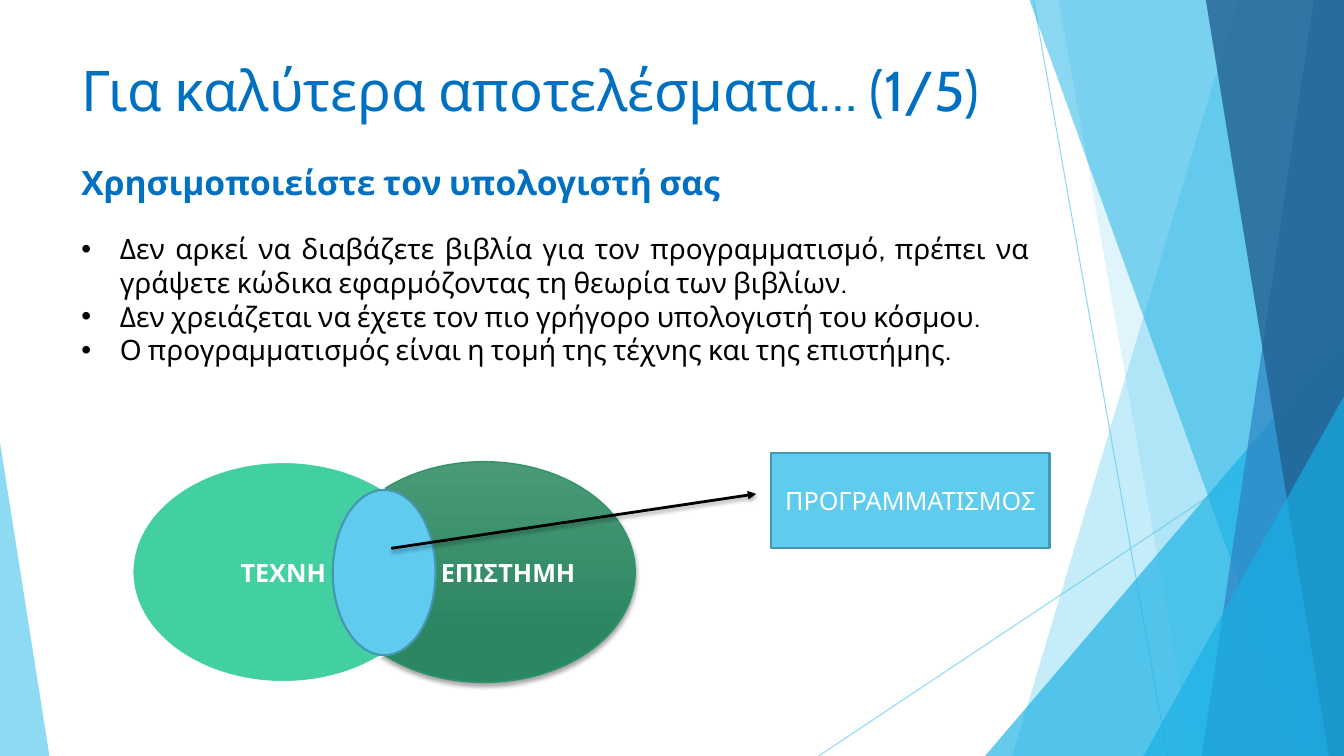
from dataclasses import dataclass

from lxml.etree import SubElement
from pptx import Presentation
from pptx.dml.color import RGBColor as RGB
from pptx.enum.shapes import MSO_CONNECTOR as CONN, MSO_SHAPE as SHAPE
from pptx.enum.text import MSO_ANCHOR as ANCHOR, PP_ALIGN as ALIGN
from pptx.oxml.ns import qn
from pptx.util import Inches, Pt

W, H = 13.33, 7.5


@dataclass(frozen=True)
class Theme:
    """Colours, font and type sizes of the slide."""
    font: str = "Cabin"
    heading: str = "0070C0"
    ink: str = "000000"
    white: str = "FFFFFF"
    sky: str = "5FCBEF"
    cyan: str = "17B0E4"
    blue: str = "2E83C3"
    navy: str = "226292"
    sky_edge: str = "4696B1"
    mint: str = "42D0A2"
    green_top: str = "4A9A76"
    green: str = "2A8762"
    green_edge: str = "2E946B"
    title_size: int = 40
    subtitle_size: int = 24
    body_size: int = 20
    label_size: int = 18


T = Theme()


@dataclass(frozen=True)
class Facet:
    """A translucent panel from a slanted left edge to the slide's right edge."""
    top_x: float
    bottom_x: float
    color: str
    alpha: int


@dataclass(frozen=True)
class Wedge:
    """A translucent right triangle standing on the slide's bottom edge."""
    x: float
    width: float
    height: float
    apex: float
    color: str
    alpha: int


@dataclass(frozen=True)
class Node:
    """A labelled shape of the diagram."""
    kind: SHAPE
    box: tuple[float, float, float, float]
    fill: str
    edge: str
    edge_width: float
    label: str = ""
    bold: bool = True
    shift: float = 0
    gradient_top: str = ""


DECOR = [
    Facet(12.28, 10.04, T.sky, 36),
    Facet(10.5, 11.83, T.sky, 20),
    Wedge(9.77, 3.56, 4.17, 1, T.cyan, 66),
    Facet(10.21, 12.91, T.cyan, 50),
    Facet(13.03, 11.92, T.blue, 70),
    Facet(11.96, 13.18, T.navy, 80),
    Wedge(11.34, 1.99, 3.57, 1, T.cyan, 66),
    Wedge(0, 0.49, 3.11, 0, T.sky, 70),
]
NODES = [
    Node(SHAPE.OVAL, (3.3, 4.58, 3, 2.19), T.green, T.green_edge, 1,
         "ΕΠΙΣΤΗΜΗ", shift=0.48, gradient_top=T.green_top),
    Node(SHAPE.OVAL, (1.31, 4.58, 3, 2.19), T.mint, T.white, 2, "ΤΕΧΝΗ"),
    Node(SHAPE.OVAL, (3.3, 4.86, 1.02, 1.64), T.sky, T.sky_edge, 1.5),
    Node(SHAPE.RECTANGLE, (7.65, 4.49, 2.76, 0.95), T.sky, T.sky_edge, 1.5,
         "ΠΡΟΓΡΑΜΜΑΤΙΣΜΟΣ", bold=False),
]
BULLETS = [
    "Δεν αρκεί να διαβάζετε βιβλία για τον προγραμματισμό, πρέπει να \v"
    "γράψετε κώδικα εφαρμόζοντας τη θεωρία των βιβλίων.",
    "Δεν χρειάζεται να έχετε τον πιο γρήγορο υπολογιστή του κόσμου.",
    "Ο προγραμματισμός είναι η τομή της τέχνης και της επιστήμης.",
]


def set_alpha(fill, percent: int) -> None:
    """Make a solid fill translucent."""
    clr = fill.find(".//" + qn("a:srgbClr"))
    SubElement(clr, qn("a:alpha"), val=str(percent * 1000))


def add_shadow(effects) -> None:
    """Put a soft shadow below the element that owns the effect list."""
    shadow = SubElement(effects, qn("a:outerShdw"), blurRad=str(Pt(3)),
                        dist=str(Pt(2)), dir="5400000", rotWithShape="0")
    clr = SubElement(shadow, qn("a:srgbClr"), val=T.ink)
    SubElement(clr, qn("a:alpha"), val="35000")


def add_line(s, start: tuple[float, float], end: tuple[float, float],
             color: str, width: float):
    """Draw a straight line with an empty effect list."""
    line = s.shapes.add_connector(CONN.STRAIGHT, *map(Inches, start + end))
    line.line.color.rgb = RGB.from_string(color)
    line.line.width = Pt(width)
    SubElement(line._element.spPr, qn("a:effectLst"))
    return line


def add_decor(s, part: Facet | Wedge) -> None:
    """Draw one translucent background panel."""
    if isinstance(part, Facet):
        outline = s.shapes.build_freeform(Inches(part.top_x), 0)
        corners = [(W, 0), (W, H), (part.bottom_x, H)]
        outline.add_line_segments([(Inches(x), Inches(y)) for x, y in corners])
        sp = outline.convert_to_shape()
    else:
        box = part.x, H - part.height, part.width, part.height
        sp = s.shapes.add_shape(SHAPE.ISOSCELES_TRIANGLE, *map(Inches, box))
        sp.adjustments[0] = part.apex
    sp.fill.solid()
    sp.fill.fore_color.rgb = RGB.from_string(part.color)
    set_alpha(sp._element.spPr, part.alpha)
    sp.line.fill.background()
    sp.shadow.inherit = False


def style(p, size: int, color: str, bold: bool, align: ALIGN) -> None:
    """Format a paragraph and its runs."""
    p.alignment = align
    for r in p.runs:
        r.font.name = T.font
        r.font.size = Pt(size)
        r.font.bold = bold
        r.font.color.rgb = RGB.from_string(color)


def add_text(s, box: tuple[float, float, float, float], lines: list[str],
             size: int, color: str, bold: bool = False,
             align: ALIGN = ALIGN.JUSTIFY, bulleted: bool = False) -> None:
    """Add a wrapped text box with one paragraph per line."""
    tf = s.shapes.add_textbox(*map(Inches, box)).text_frame
    tf.word_wrap = True
    for i, line in enumerate(lines):
        p = tf.add_paragraph() if i else tf.paragraphs[0]
        p.text = line
        style(p, size, color, bold, align)
        if bulleted:
            pPr = p._p.get_or_add_pPr()
            pPr.set("marL", str(Inches(0.38)))
            pPr.set("indent", str(-Inches(0.38)))
            SubElement(pPr, qn("a:buFont"), typeface="Arial")
            SubElement(pPr, qn("a:buChar"), char="•")


def add_node(s, node: Node) -> None:
    """Draw one diagram shape with its label."""
    sp = s.shapes.add_shape(node.kind, *map(Inches, node.box))
    sp.shadow.inherit = False
    if node.gradient_top:
        sp.fill.gradient()
        sp.fill.gradient_angle = 270
        stops = zip(sp.fill.gradient_stops, (node.gradient_top, node.fill), (0, 0.78))
        for stop, color, position in stops:
            stop.color.rgb = RGB.from_string(color)
            stop.position = position
        add_shadow(sp._element.spPr.find(qn("a:effectLst")))
    else:
        sp.fill.solid()
        sp.fill.fore_color.rgb = RGB.from_string(node.fill)
    sp.line.color.rgb = RGB.from_string(node.edge)
    sp.line.width = Pt(node.edge_width)
    if node.label:
        tf = sp.text_frame
        tf.text = node.label
        tf.word_wrap = True
        tf.vertical_anchor = ANCHOR.MIDDLE
        if node.shift:
            tf.margin_left, tf.margin_right = Inches(node.shift), 0
        style(tf.paragraphs[0], T.label_size, T.white, node.bold, ALIGN.CENTER)


def main() -> None:
    """Build the slide and save it."""
    prs = Presentation()
    prs.slide_width, prs.slide_height = Inches(W), Inches(H)
    s = prs.slides.add_slide(prs.slide_layouts[6])
    for start, end in [((10.25, 0), (11.58, H)), ((W, 4.03), (8.12, H))]:
        ray = add_line(s, start, end, T.sky, 0.75)
        set_alpha(ray._element.spPr, 70)
    for part in DECOR:
        add_decor(s, part)
    add_text(s, (0.71, 0.5, 12.45, 0.94), ["Για καλύτερα αποτελέσματα… (1/5)"],
             T.title_size, T.heading, align=ALIGN.LEFT)
    add_text(s, (0.71, 1.56, 7.09, 0.5), ["Χρησιμοποιείστε τον υπολογιστή σας"],
             T.subtitle_size, T.heading, bold=True)
    for node in NODES:
        add_node(s, node)
    arrow = add_line(s, (3.88, 5.44), (7.5, 4.9), T.ink, 2)
    SubElement(arrow.line._get_or_add_ln(), qn("a:tailEnd"), type="triangle")
    add_shadow(arrow._element.spPr.find(qn("a:effectLst")))
    add_text(s, (0.71, 2.25, 9.7, 1.78), BULLETS, T.body_size, T.ink, bulleted=True)
    prs.save("out.pptx")


if __name__ == "__main__":
    main()
